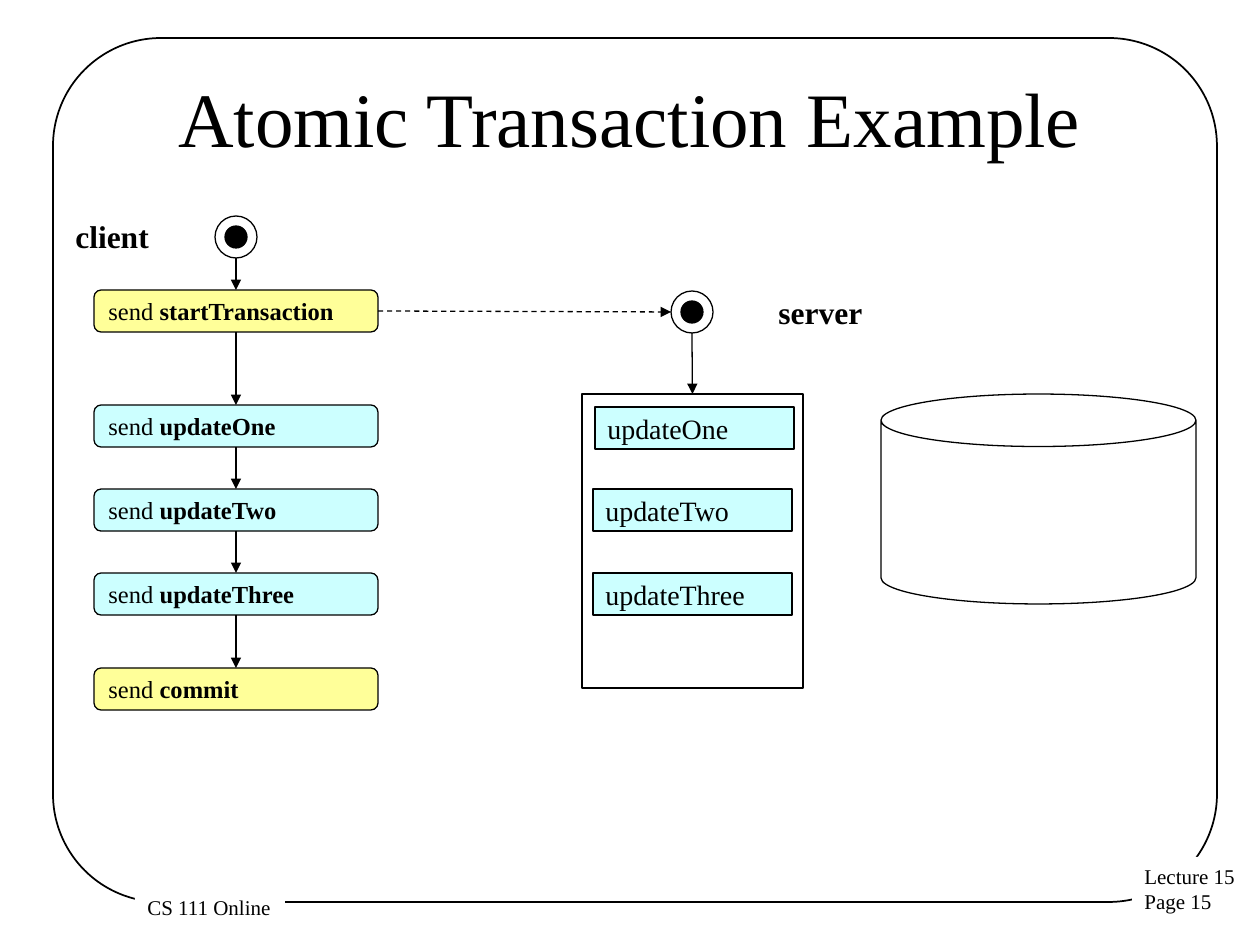
"""Build the atomic transaction example slide: client steps, server updates and a data store."""
from typing import NamedTuple, Optional

from lxml import etree
from pptx import Presentation
from pptx.dml.color import RGBColor
from pptx.enum.dml import MSO_LINE
from pptx.enum.shapes import MSO_CONNECTOR, MSO_SHAPE
from pptx.enum.text import MSO_ANCHOR, PP_ALIGN
from pptx.oxml.ns import qn
from pptx.util import Pt

PX = 914400 / 126
FONT = "Times New Roman"
BLACK, WHITE, YELLOW, CYAN = "000000", "FFFFFF", "FFFF99", "CCFFFF"
RECTANGLE, ROUNDED = MSO_SHAPE.RECTANGLE, MSO_SHAPE.ROUNDED_RECTANGLE
OVAL, CAN = MSO_SHAPE.OVAL, MSO_SHAPE.CAN
STRAIGHT, DASH = MSO_CONNECTOR.STRAIGHT, MSO_LINE.DASH
MIDDLE, TOP = MSO_ANCHOR.MIDDLE, MSO_ANCHOR.TOP
LEFT, CENTER = PP_ALIGN.LEFT, PP_ALIGN.CENTER
TOP_SITE, BOTTOM_SITE, RIGHT_SITE = 0, 2, 3
ROW_HEIGHT = 42
CIRCLE, DOT = 42, 22


class Frame(NamedTuple):
    left: int
    top: int
    width: int
    height: int


class Step(NamedTuple):
    name: str
    top: int
    fill: str


class Update(NamedTuple):
    name: str
    left: int
    top: int


class Label(NamedTuple):
    text: str
    frame: Frame
    size: int
    bold: bool = False
    fill: Optional[str] = None
    align: PP_ALIGN = LEFT
    anchor: MSO_ANCHOR = TOP
    wrap: bool = False


class Anchor(NamedTuple):
    x: int = 0
    y: int = 0
    shape: object = None
    site: int = 0


STEPS = [
    Step("startTransaction", 290, YELLOW),
    Step("updateOne", 405, CYAN),
    Step("updateTwo", 489, CYAN),
    Step("updateThree", 573, CYAN),
    Step("commit", 668, YELLOW),
]
UPDATES = [
    Update("updateOne", 595, 407),
    Update("updateTwo", 593, 489),
    Update("updateThree", 593, 573),
]
LABELS = [
    Label("Lecture 15\nPage 15", Frame(1132, 857, 117, 64), 12, fill=WHITE),
    Label("CS 111 Online", Frame(135, 888, 150, 38), 12, fill=WHITE),
    Label("Atomic Transaction Example", Frame(63, 38, 1134, 157), 44,
          align=CENTER, anchor=MIDDLE, wrap=True),
    Label("client", Frame(63, 211, 99, 51), 18, bold=True),
    Label("server", Frame(766, 287, 109, 51), 18, bold=True),
]


def emu(*lengths: int) -> list:
    return [round(length * PX) for length in lengths]


def color(value: str) -> RGBColor:
    return RGBColor.from_string(value)


def paint(shape, fill: Optional[str]) -> None:
    if fill:
        shape.fill.solid()
        shape.fill.fore_color.rgb = color(fill)
    else:
        shape.fill.background()


def add_shape(page, kind, frame: Frame, fill: Optional[str] = None, weight: float = 0.75):
    shape = page.shapes.add_shape(kind, *emu(*frame))
    shape.shadow.inherit = False
    paint(shape, fill)
    shape.line.color.rgb = color(BLACK)
    shape.line.width = Pt(weight)
    return shape


def style_text(box, size: int, bold: bool = False, align=LEFT, anchor=MIDDLE,
               wrap: bool = True) -> None:
    box.text_frame.word_wrap = wrap
    box.text_frame.vertical_anchor = anchor
    for para in box.text_frame.paragraphs:
        para.alignment = align
        for span in para.runs:
            span.font.name = FONT
            span.font.size = Pt(size)
            span.font.bold = bold
            span.font.color.rgb = color(BLACK)


def add_label(page, label: Label) -> None:
    box = page.shapes.add_textbox(*emu(*label.frame))
    paint(box, label.fill)
    box.text_frame.text = label.text
    style_text(box, label.size, label.bold, label.align, label.anchor, label.wrap)


def add_step(page, step: Step):
    box = add_shape(page, ROUNDED, Frame(94, step.top, 284, ROW_HEIGHT), step.fill)
    box.text_frame.text = "send "
    name = box.text_frame.paragraphs[0].add_run()
    name.text = step.name
    style_text(box, 14)
    name.font.bold = True
    return box


def add_update(page, update: Update) -> None:
    box = add_shape(page, RECTANGLE, Frame(update.left, update.top, 199, ROW_HEIGHT), CYAN)
    box.text_frame.text = update.name
    style_text(box, 16)


def add_start(page, center_x: int, center_y: int) -> None:
    for size, fill in ((DOT, BLACK), (CIRCLE, None)):
        frame = Frame(center_x - size // 2, center_y - size // 2, size, size)
        add_shape(page, OVAL, frame, fill)


def add_arrow(page, start: Anchor, end: Anchor, dashed: bool = False) -> None:
    arrow = page.shapes.add_connector(STRAIGHT, *emu(start.x, start.y, end.x, end.y))
    if start.shape is not None:
        arrow.begin_connect(start.shape, start.site)
    if end.shape is not None:
        arrow.end_connect(end.shape, end.site)
    arrow.line.color.rgb = color(BLACK)
    arrow.line.width = Pt(0.75)
    if dashed:
        arrow.line.dash_style = DASH
    properties = arrow.element.spPr
    etree.SubElement(properties.find(qn("a:ln")), qn("a:tailEnd"), type="triangle")
    etree.SubElement(properties, qn("a:effectLst"))


def main() -> None:
    deck = Presentation()
    deck.slide_width, deck.slide_height = emu(1260, 945)
    page = deck.slides.add_slide(deck.slide_layouts[6])

    border = add_shape(page, ROUNDED, Frame(53, 38, 1164, 864), weight=1)
    border.adjustments[0] = 0.125
    for label in LABELS:
        add_label(page, label)

    add_start(page, 236, 237)
    add_start(page, 692, 312)
    steps = [add_step(page, step) for step in STEPS]
    for update in UPDATES:
        add_update(page, update)
    server = add_shape(page, RECTANGLE, Frame(582, 394, 221, 294))
    add_shape(page, CAN, Frame(881, 394, 315, 210))

    add_arrow(page, Anchor(236, 258), Anchor(shape=steps[0], site=TOP_SITE))
    for upper, lower in zip(steps, steps[1:]):
        add_arrow(page, Anchor(shape=upper, site=BOTTOM_SITE), Anchor(shape=lower, site=TOP_SITE))
    add_arrow(page, Anchor(shape=steps[0], site=RIGHT_SITE), Anchor(671, 312), dashed=True)
    add_arrow(page, Anchor(692, 333), Anchor(shape=server, site=TOP_SITE))

    deck.save("out.pptx")


if __name__ == "__main__":
    main()
